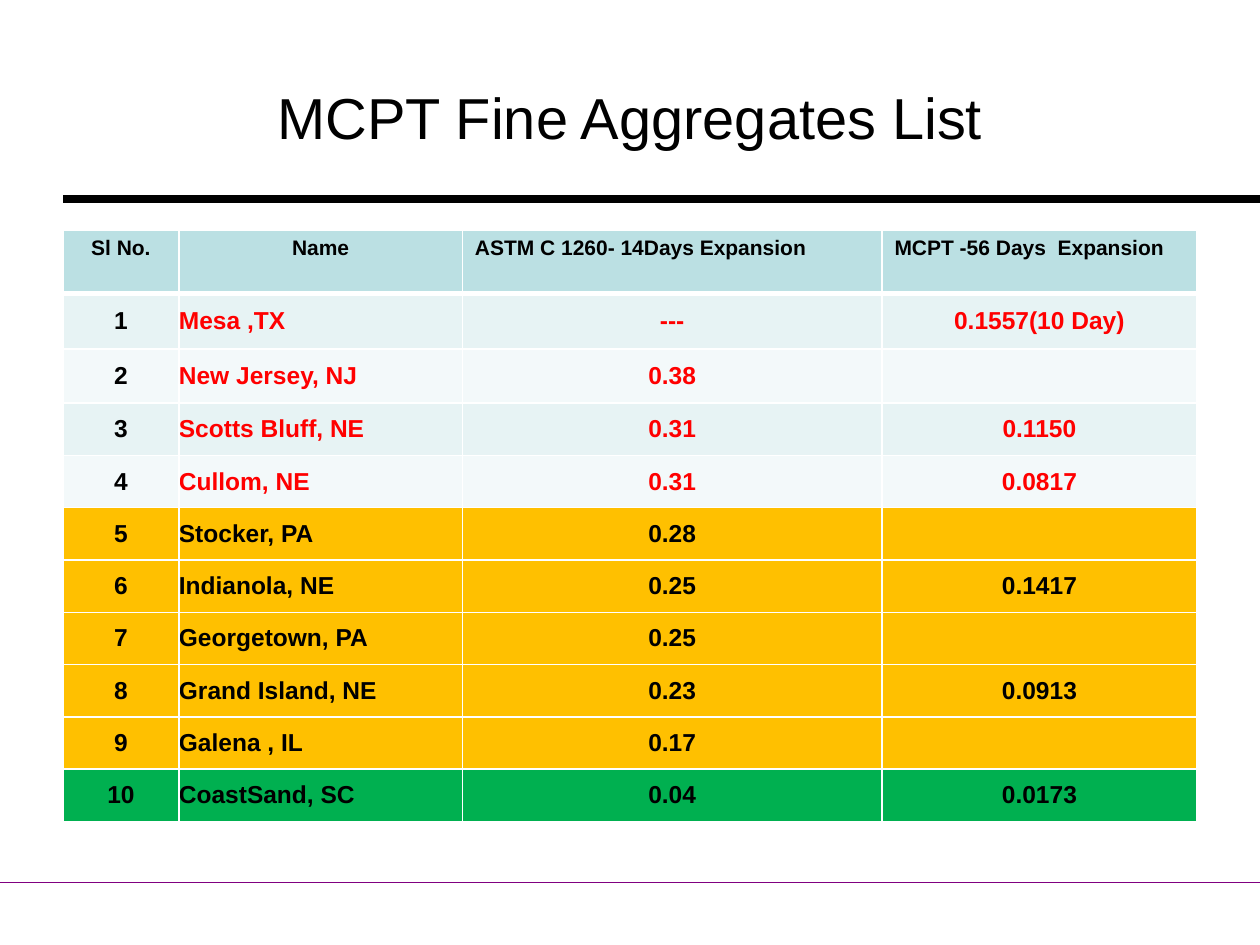
"""Build the MCPT fine aggregates slide with its expansion table."""
from dataclasses import dataclass

from lxml import etree
from pptx import Presentation
from pptx import util as u
from pptx.dml import color
from pptx.enum import shapes, text
from pptx.oxml import ns


@dataclass(frozen=True)
class Theme:
    font: str = "Arial"
    ink: str = "000000"
    alert: str = "FF0000"
    border: str = "FFFFFF"
    header: str = "BBE0E3"
    band_dark: str = "E7F3F4"
    band_light: str = "F3F9FA"
    amber: str = "FFC000"
    green: str = "00B050"
    footer: str = "800080"
    title_size: float = 33
    header_size: float = 12
    body_size: float = 14


def write(frame, content, size, ink, align, bold=True):
    frame.text = content
    para = frame.paragraphs[0]
    para.alignment = align
    for span in para.runs:
        span.font.name = theme.font
        span.font.size = u.Pt(size)
        span.font.bold = bold
        span.font.color.rgb = color.RGBColor.from_string(ink)


def style_cell(cell, fill, edges):
    properties = cell._tc.get_or_add_tcPr()
    for side, width in edges.items():
        line = etree.SubElement(properties, ns.qn(f"a:ln{side}"), w=str(u.Pt(width)))
        solid = etree.SubElement(line, ns.qn("a:solidFill"))
        etree.SubElement(solid, ns.qn("a:srgbClr"), val=theme.border)
    cell.fill.solid()
    cell.fill.fore_color.rgb = color.RGBColor.from_string(fill)


theme = Theme()
LEFT, CENTER = text.PP_ALIGN.LEFT, text.PP_ALIGN.CENTER
MIDDLE = text.MSO_ANCHOR.MIDDLE

deck = Presentation()
deck.slide_width, deck.slide_height = u.Inches(10), u.Inches(7.5)
page = deck.slides.add_slide(deck.slide_layouts[6])

for start, height, ink, width in (
    (0.5, 1.58, theme.ink, 4.5),
    (0, 7, theme.footer, 0.25),
):
    rule = page.shapes.add_connector(
        shapes.MSO_CONNECTOR.STRAIGHT,
        u.Inches(start), u.Inches(height), u.Inches(10), u.Inches(height),
    )
    rule.line.color.rgb = color.RGBColor.from_string(ink)
    rule.line.width = u.Pt(width)
    etree.SubElement(rule._element.spPr, ns.qn("a:effectLst"))

title = page.shapes.add_textbox(u.Inches(0.5), u.Inches(0.3), u.Inches(9), u.Inches(1.25))
title.text_frame.word_wrap = True
title.text_frame.vertical_anchor = MIDDLE
write(title.text_frame, "MCPT Fine Aggregates List", theme.title_size, theme.ink, CENTER, False)

headings = ("Sl No.", "Name", "ASTM C 1260- 14Days Expansion", "MCPT -56 Days  Expansion")
aggregates = (
    ("Mesa ,TX", "---", "0.1557(10 Day)"),
    ("New Jersey, NJ", "0.38", ""),
    ("Scotts Bluff, NE", "0.31", "0.1150"),
    ("Cullom, NE", "0.31", "0.0817"),
    ("Stocker, PA", "0.28", ""),
    ("Indianola, NE", "0.25", "0.1417"),
    ("Georgetown, PA", "0.25", ""),
    ("Grand Island, NE", "0.23", "0.0913"),
    ("Galena , IL", "0.17", ""),
    ("CoastSand, SC", "0.04", "0.0173"),
)
fills = [theme.band_dark, theme.band_light] * 2 + [theme.amber] * 5 + [theme.green]
reactive_count = 4

table = page.shapes.add_table(
    len(aggregates) + 1, len(headings),
    u.Inches(0.5), u.Inches(1.83), u.Inches(9), u.Inches(4.69),
).table
for column, width in zip(table.columns, (0.92, 2.25, 3.33, 2.5)):
    column.width = u.Inches(width)
for row, height in zip(table.rows, [0.5, 0.44, 0.43] + [0.415] * 8):
    row.height = u.Inches(height)

for index, heading in enumerate(headings):
    cell = table.cell(0, index)
    style_cell(cell, theme.header, {"L": 1, "R": 1, "T": 1, "B": 3})
    write(cell.text_frame, heading, theme.header_size, theme.ink, CENTER if index < 2 else LEFT)

for number, (aggregate, fill) in enumerate(zip(aggregates, fills), start=1):
    name_ink = theme.alert if number <= reactive_count else theme.ink
    top_width = 3 if number == 1 else 1
    for index, content in enumerate((str(number), *aggregate)):
        cell = table.cell(number, index)
        style_cell(cell, fill, {"L": 1, "R": 1, "T": top_width, "B": 1})
        cell.vertical_anchor = MIDDLE
        if index:
            cell.margin_left = cell.margin_right = cell.margin_top = cell.margin_bottom = 0
        write(
            cell.text_frame, content, theme.body_size,
            name_ink if index else theme.ink, LEFT if index == 1 else CENTER,
        )

deck.save("out.pptx")
